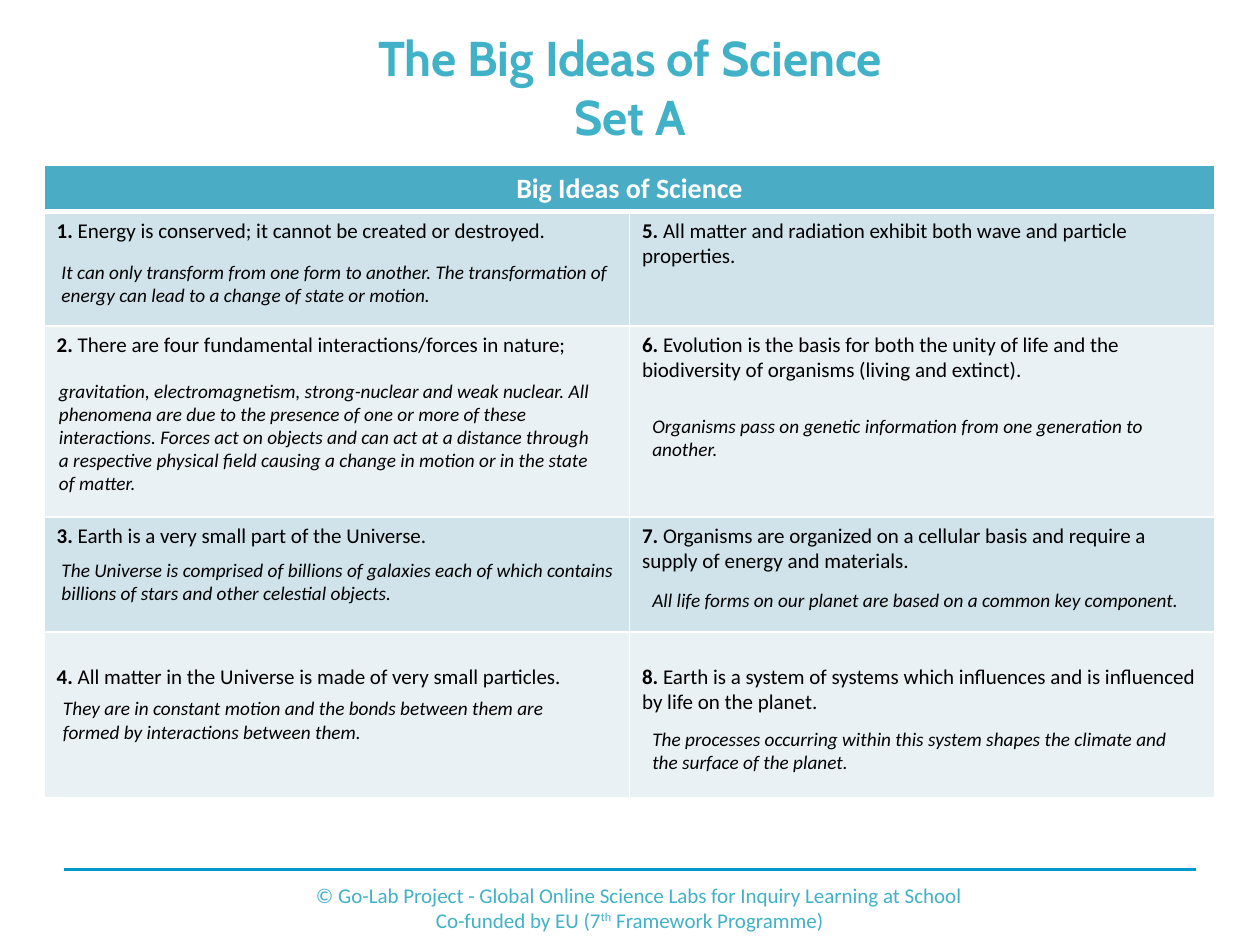
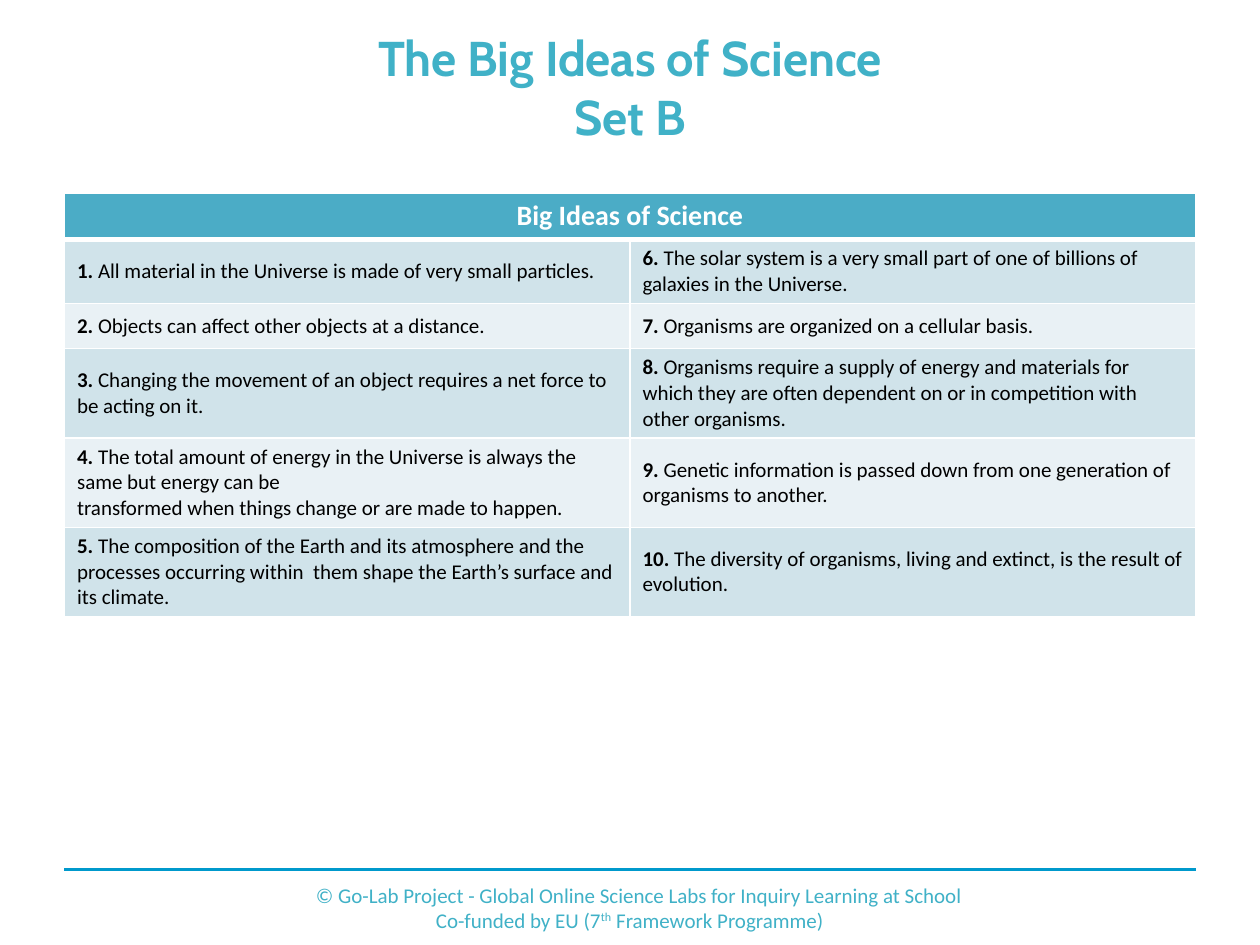
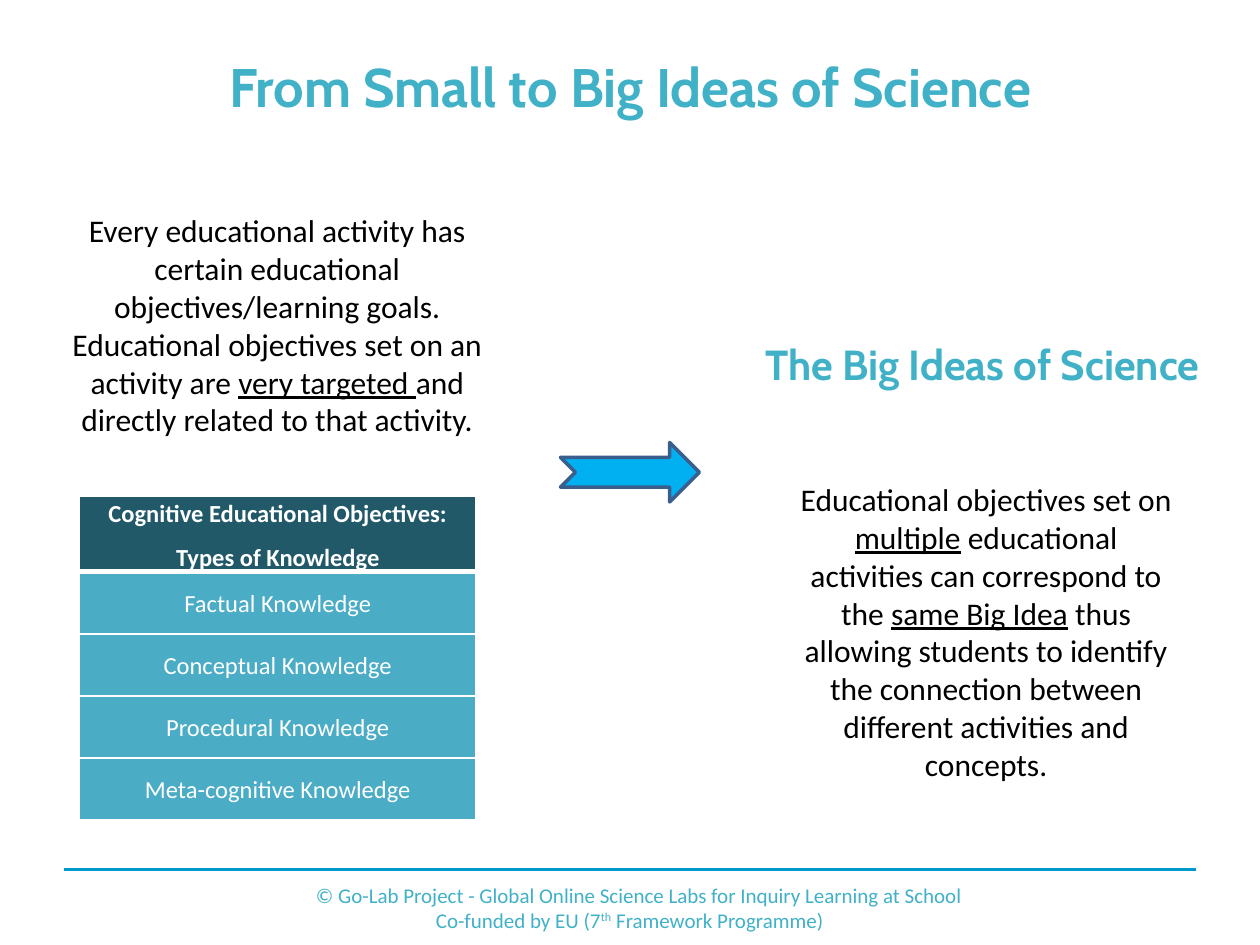
from collections import namedtuple
from dataclasses import dataclass, replace

from lxml import etree
from pptx import Presentation
from pptx.dml.color import RGBColor
from pptx.enum.shapes import MSO_CONNECTOR, MSO_SHAPE
from pptx.enum.text import MSO_ANCHOR as Anchor, MSO_AUTO_SIZE as AutoSize, PP_ALIGN as Align
from pptx.oxml.ns import qn
from pptx.util import Cm, Pt

COLORS = {
    "title": "40B1C7",
    "rule": "0099CC",
    "header": "4BACC6",
    "dark_header": "215968",
    "band_dark": "D0E3EA",
    "band_light": "E9F1F5",
    "arrow": "00B0F0",
    "arrow_edge": "3A5F8C",
    "white": "FFFFFF",
    "black": "000000",
}

Box = namedtuple("Box", "left top width height")
Note = namedtuple("Note", "left top width lines text")

TITLE_BOX = Box(1.27, 0.74, 22.86, 2.0)
FOOTER_BOX = Box(1.3, 17.53, 22.8, 1.52)
HEADER_HEIGHT = 0.94


@dataclass(frozen=True)
class Style:
    size: float
    color: str = "black"
    font: str = "Calibri"
    bold: bool = False
    italic: bool = False
    underline: bool = False


TITLE = Style(31, "title", "Cabin", bold=True)
FOOTER = Style(12, "title")
IDEA = Style(12)
IDEA_NUMBER = replace(IDEA, bold=True)
NOTE = Style(11, italic=True)
TABLE_HEADER = Style(16, "white", bold=True)
BODY = Style(18)
BODY_KEY = replace(BODY, underline=True)
KNOWLEDGE = Style(14, "white")

SET_A = [
    ("Energy is conserved; it cannot be created or destroyed.",
     "All matter and radiation exhibit both wave and particle properties."),
    ("There are four fundamental interactions/forces in nature;",
     "Evolution is the basis for both the unity of life and the biodiversity of organisms "
     "(living and extinct)."),
    ("Earth is a very small part of the Universe.",
     "Organisms are organized on a cellular basis and require a supply of energy and materials."),
    ("All matter in the Universe is made of very small particles.",
     "Earth is a system of systems which influences and is influenced by life on the planet."),
]
SET_B = [
    ("All material in the Universe is made of very small particles.",
     "The solar system is a very small part of one of billions of galaxies in the Universe."),
    ("Objects can affect other objects at a distance.",
     "Organisms are organized on a cellular basis."),
    ("Changing the movement of an object requires a net force to be acting on it.",
     "Organisms require a supply of energy and materials for which they are often dependent on "
     "or in competition with other organisms."),
    ("The total amount of energy in the Universe is always the same but energy can be\n"
     "transformed when things change or are made to happen.",
     "Genetic information is passed down from one generation of organisms to another."),
    ("The composition of the Earth and its atmosphere and the processes occurring within  them "
     "shape the Earth’s surface and its climate.",
     "The diversity of organisms, living and extinct, is the result of evolution."),
]
# Positions are measured from the corner of the table.
SET_A_NOTES = [
    Note(0.1, 1.8, 11.81, 2,
         "It can only transform from one form to another. The transformation of energy can lead "
         "to a change of state or motion."),
    Note(0.05, 4.19, 11.35, 5,
         "gravitation, electromagnetism, strong-nuclear and weak nuclear. All phenomena are due "
         "to the presence of one or more of these interactions. Forces act on objects and can act "
         "at a distance through a respective physical field causing a change in motion or in the "
         "state of matter."),
    Note(0.1, 7.8, 12.7, 2,
         "The Universe is comprised of billions of galaxies each of which contains billions of "
         "stars and other celestial objects."),
    Note(0.13, 10.59, 11.28, 2,
         "They are in constant motion and the bonds between them are formed by interactions "
         "between them."),
    Note(12.01, 4.9, 10.8, 2,
         "Organisms pass on genetic information from one generation to another."),
    Note(12.01, 8.4, 12.0, 1,
         "All life forms on our planet are based on a common key component."),
    Note(12.01, 11.2, 11.2, 2,
         "The processes occurring within this system shapes the climate and the surface of the "
         "planet."),
]
KNOWLEDGE_TYPES = ["Factual", "Conceptual", "Procedural", "Meta-cognitive"]


def rgb(name):
    return RGBColor.from_string(COLORS[name])


def in_cm(box):
    return [Cm(length) for length in box]


def add_run(paragraph, text, style):
    run = paragraph.add_run()
    run.text = text
    font = run.font
    font.name, font.size = style.font, Pt(style.size)
    font.bold, font.italic, font.underline = style.bold, style.italic, style.underline
    font.color.rgb = rgb(style.color)
    return run


def write(frame, paragraphs, align=Align.LEFT):
    """Fill a text frame with paragraphs, each a list of (text, style) runs."""
    for index, runs in enumerate(paragraphs):
        paragraph = frame.add_paragraph() if index else frame.paragraphs[0]
        paragraph.alignment = align
        for text, style in runs:
            add_run(paragraph, text, style)


def add_text(slide, box, paragraphs, align=Align.CENTER, anchor=Anchor.MIDDLE):
    frame = slide.shapes.add_textbox(*in_cm(box)).text_frame
    frame.word_wrap = True
    frame.vertical_anchor = anchor
    write(frame, paragraphs, align)
    return frame


def add_title(slide, lines, style, box=TITLE_BOX):
    title = slide.shapes.title
    title.left, title.top, title.width, title.height = in_cm(box)
    frame = title.text_frame
    frame.auto_size = AutoSize.NONE
    frame.vertical_anchor = Anchor.MIDDLE
    paragraph = frame.paragraphs[0]
    paragraph.alignment = Align.CENTER
    for index, line in enumerate(lines):
        if index:
            paragraph.add_line_break()
        add_run(paragraph, line, style)


def add_footer(slide, box=FOOTER_BOX):
    left, top, right = Cm(box.left), Cm(box.top), Cm(box.left + box.width)
    rule = slide.shapes.add_connector(MSO_CONNECTOR.STRAIGHT, left, top, right, top)
    rule.line.color.rgb = rgb("rule")
    rule.line.width = Pt(1.5)
    etree.SubElement(rule._element.spPr, qn("a:effectLst"))

    credit_box = Box(box.left + 4.39, box.top, 14.2, box.height)
    frame = add_text(slide, credit_box, [
        [("© Go-Lab Project - Global Online Science Labs for Inquiry Learning at School", FOOTER)],
        [("Co-funded by EU (7", FOOTER), ("th", FOOTER), (" Framework Programme)", FOOTER)],
    ])
    copyright_line, funding_line = frame.paragraphs
    copyright_line._p.get_or_add_pPr().set("marL", str(Cm(0.19)))
    funding_line._p.get_or_add_pPr().set("marR", str(Cm(0.19)))
    funding_line.runs[1].font._element.set("baseline", "30000")


def style_cell(cell, fill, bottom_width=1, top_width=1):
    properties = cell._tc.get_or_add_tcPr()
    for side, width in zip("LRTB", (1, 1, top_width, bottom_width)):
        border = etree.SubElement(properties, qn(f"a:ln{side}"), w=str(Pt(width)))
        color = etree.SubElement(etree.SubElement(border, qn("a:solidFill")), qn("a:srgbClr"))
        color.set("val", COLORS["white"])
    cell.fill.solid()
    cell.fill.fore_color.rgb = rgb(fill)


def add_grid(slide, box, row_heights, column_count, header_fill, row_fills):
    """Add a table with a heading row, whose body rows take the fills in turn."""
    table = slide.shapes.add_table(len(row_heights), column_count, *in_cm(box)).table
    table.horz_banding = False
    for column in table.columns:
        column.width = Cm(box.width / column_count)
    for index, (row, height) in enumerate(zip(table.rows, row_heights)):
        row.height = Cm(height)
        fill = row_fills[(index - 1) % len(row_fills)] if index else header_fill
        for cell in row.cells:
            style_cell(cell, fill, 1 if index else 3, 3 if index == 1 else 1)
    return table


def add_ideas_table(slide, box, ideas, row_heights, anchor):
    table = add_grid(slide, box, [HEADER_HEIGHT, *row_heights], 2,
                     "header", ["band_dark", "band_light"])
    heading = table.cell(0, 0)
    heading.merge(table.cell(0, 1))
    write(heading.text_frame, [[("Big Ideas of Science", TABLE_HEADER)]], Align.CENTER)
    for row, pair in enumerate(ideas, 1):
        for column, idea in enumerate(pair):
            cell = table.cell(row, column)
            cell.vertical_anchor = anchor
            first, *others = idea.split("\n")
            number = row + column * len(ideas)
            write(cell.text_frame, [[(f"{number}. ", IDEA_NUMBER), (first, IDEA)],
                                    *[[(line, IDEA)] for line in others]])
    return table


def add_notes(slide, box, notes):
    for note in notes:
        note_box = Box(box.left + note.left, box.top + note.top,
                       note.width, 0.25 + 0.47 * note.lines)
        frame = add_text(slide, note_box, [[(note.text, NOTE)]], Align.LEFT, Anchor.TOP)
        frame.auto_size = AutoSize.SHAPE_TO_FIT_TEXT


def add_knowledge_table(slide, box):
    header_height = 1.5
    row_height = (box.height - header_height) / len(KNOWLEDGE_TYPES)
    heights = [header_height] + [row_height] * len(KNOWLEDGE_TYPES)
    table = add_grid(slide, box, heights, 1, "dark_header", ["header"])
    heading = replace(KNOWLEDGE, bold=True)
    contents = [[[("Cognitive Educational Objectives:", heading)],
                 [("Types of Knowledge", heading)]]]
    contents += [[[(f"{kind} Knowledge", KNOWLEDGE)]] for kind in KNOWLEDGE_TYPES]
    for row, paragraphs in enumerate(contents):
        cell = table.cell(row, 0)
        cell.vertical_anchor = Anchor.MIDDLE
        cell.margin_left = cell.margin_right = Cm(0.18)
        cell.margin_top = cell.margin_bottom = 0
        write(cell.text_frame, paragraphs, Align.CENTER)
        for index, paragraph in enumerate(cell.text_frame.paragraphs):
            paragraph.line_spacing = 1.1
            paragraph.space_before = Pt(3 if index else 0)
            paragraph.space_after = Pt(3)


def add_arrow(slide, box):
    arrow = slide.shapes.add_shape(MSO_SHAPE.NOTCHED_RIGHT_ARROW, *in_cm(box))
    arrow.shadow.inherit = False
    arrow.fill.solid()
    arrow.fill.fore_color.rgb = rgb("arrow")
    arrow.line.color.rgb = rgb("arrow_edge")
    arrow.line.width = Pt(2)


def add_slide(deck, title_lines, title_style=TITLE):
    slide = deck.slides.add_slide(deck.slide_layouts[5])
    add_footer(slide)
    add_title(slide, title_lines, title_style)
    return slide


def build_ideas_slide(deck, set_name, box, ideas, row_heights, anchor):
    slide = add_slide(deck, ["The Big Ideas of Science", f"Set {set_name}"],
                      replace(TITLE, size=27.9))
    return slide, add_ideas_table(slide, box, ideas, row_heights, anchor)


def build_set_a(deck):
    box = Box(0.89, 3.33, 23.6, 12.75)
    slide, table = build_ideas_slide(deck, "A", box, SET_A, [2.3, 3.85, 2.32, 3.34], Anchor.TOP)
    for column in range(2):
        table.cell(len(SET_A), column).margin_top = Cm(0.65)
    add_notes(slide, box, SET_A_NOTES)


def build_set_b(deck):
    box = Box(1.3, 3.89, 22.8, 8.54)
    build_ideas_slide(deck, "B", box, SET_B, [1.29, 0.91, 1.8, 1.8, 1.8], Anchor.MIDDLE)


def build_small_to_big(deck):
    slide = add_slide(deck, ["From Small to Big Ideas of Science"])
    add_knowledge_table(slide, Box(1.6, 10.01, 8.0, 6.5))
    add_arrow(slide, Box(11.3, 8.92, 2.8, 1.2))
    add_text(slide, Box(0.89, 4.75, 9.4, 3.6), [[
        ("Every educational activity has certain educational objectives/learning goals. "
         "Educational objectives set on an activity are ", BODY),
        ("very targeted ", BODY_KEY),
        ("and directly related to that activity.", BODY),
    ]])
    add_text(slide, Box(14.9, 6.33, 9.8, 2.0),
             [[("The Big Ideas of Science", replace(TITLE, size=24))]])
    add_text(slide, Box(15.88, 10.93, 8.0, 3.6), [[
        ("Educational objectives set on ", BODY),
        ("multiple", BODY_KEY),
        (" educational activities can correspond to the ", BODY),
        ("same Big Idea", BODY_KEY),
        (" thus allowing students to identify the connection between different activities "
         "and concepts.", BODY),
    ]])


def main():
    deck = Presentation()
    deck.slide_width, deck.slide_height = Cm(25.4), Cm(19.05)
    build_set_a(deck)
    build_set_b(deck)
    build_small_to_big(deck)
    deck.save("out.pptx")


if __name__ == "__main__":
    main()
